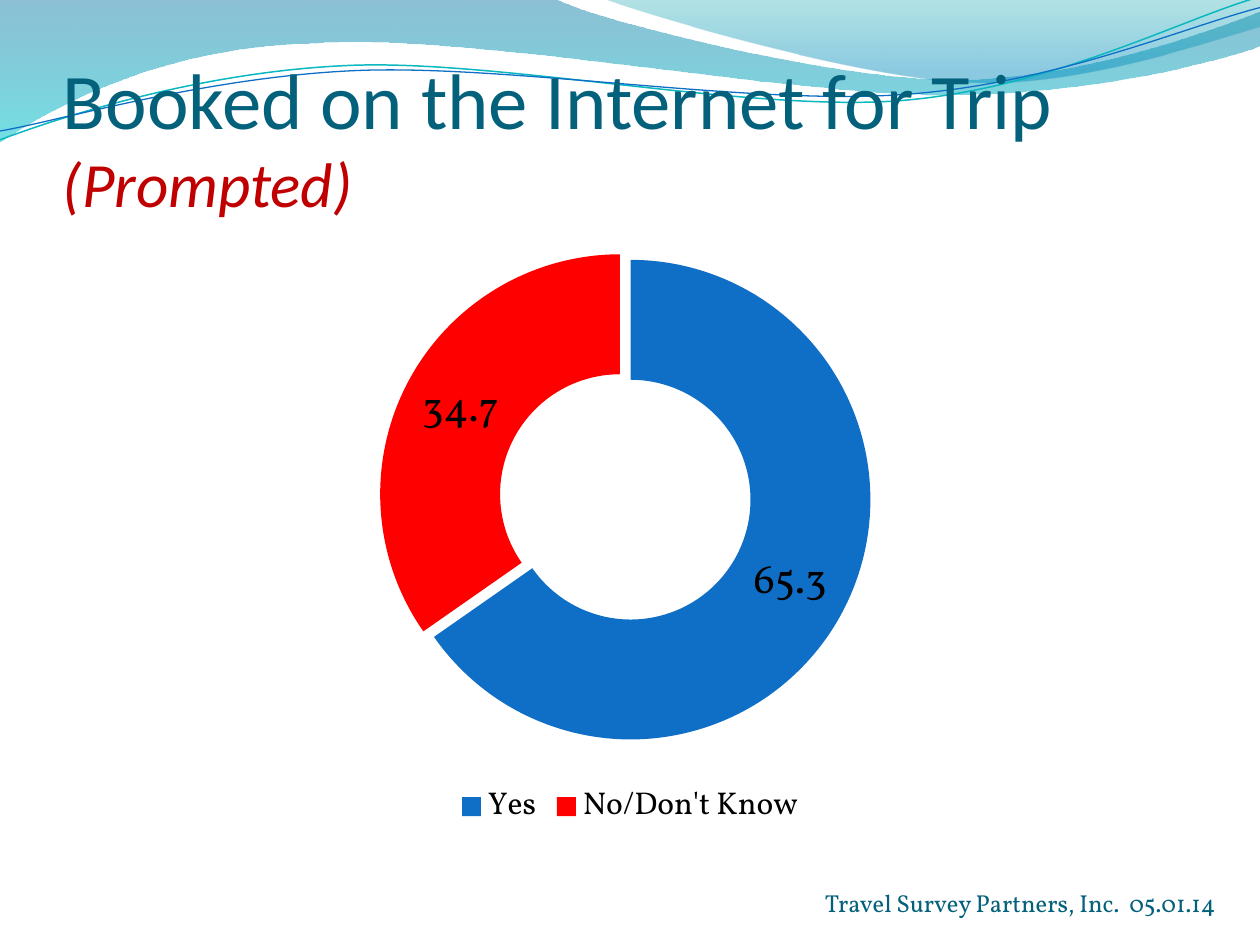
import math

from lxml import etree
from pptx import Presentation
from pptx import util as u
from pptx.chart.data import CategoryChartData
from pptx.dml.color import RGBColor
from pptx.enum import chart as ch, text
from pptx.oxml import parse_xml
from pptx.oxml.ns import nsdecls, qn

BLUE, RED, DARK_TEAL = "0F6FC6", "FF0000", "04617B"
LINE_TILT = 357.3

# Each outline: start point, then curves (6 numbers) or lines (2 numbers)
BACK_WAVE = [(0, 0), (4.4, -0.01), (4.76, 0.17, 6.64, 0.63, 7.58, 0.63),
             (8.53, 0.63, 9.58, 0.26, 10, 0.09), (10.01, 0.36),
             (9.83, 0.44, 8.7, 0.76, 7.46, 0.75),
             (6.22, 0.75, 3.82, 0.28, 2.57, 0.34),
             (1.29, 0.36, 0.46, 0.83, -0.01, 1.13), (0, 0)]
FRONT_WAVE = [(4.79, -0.01), (5.09, 0.11, 6.82, 0.62, 7.69, 0.65),
              (8.56, 0.69, 9.61, 0.32, 10, 0.21), (10, 0), (4.79, -0.01)]
TEAL_LINE = [(0, 1.11), (0.48, 0.93, 1.58, 0.57, 2.77, 0.52),
             (3.95, 0.47, 5.93, 0.89, 7.13, 0.8),
             (8.33, 0.71, 9.38, 0.15, 9.98, -0.02)]
BLUE_LINE = [(0, 1.04), (0.47, 0.96, 1.64, 0.61, 2.83, 0.56),
             (4.03, 0.51, 5.97, 0.84, 7.17, 0.75),
             (8.36, 0.67, 9.41, 0.21, 10, 0.06)]


def rgb(value):
    return RGBColor.from_string(value)


def add_outline(slide, box, steps, close, tilt=0):
    """Freeform with true curves; steps are slide positions after the tilt."""
    left, top, width, height = box
    cx, cy = left + width / 2, top + height / 2
    cos, sin = math.cos(math.radians(-tilt)), math.sin(math.radians(-tilt))

    def add_point(parent, x, y):
        dx, dy = x - cx, y - cy
        px = dx * cos - dy * sin + width / 2
        py = dx * sin + dy * cos + height / 2
        etree.SubElement(parent, qn("a:pt"), x=str(u.Inches(px)), y=str(u.Inches(py)))

    builder = slide.shapes.build_freeform(0, 0)
    builder.add_line_segments([(u.Inches(width), u.Inches(height))], close=False)
    sp = builder.convert_to_shape()
    sp.left, sp.top, sp.width, sp.height = map(u.Inches, box)
    sp.rotation = tilt
    sp.shadow.inherit = False

    outline = next(sp._element.iter(qn("a:path")))
    for child in list(outline):
        outline.remove(child)
    outline.set("w", str(u.Inches(width)))
    outline.set("h", str(u.Inches(height)))
    for i, step in enumerate(steps):
        tag = "a:moveTo" if i == 0 else "a:lnTo" if len(step) == 2 else "a:cubicBezTo"
        segment = etree.SubElement(outline, qn(tag))
        for x, y in zip(step[::2], step[1::2]):
            add_point(segment, x, y)
    if close:
        etree.SubElement(outline, qn("a:close"))
    return sp


def add_wave(slide, box, steps, stops):
    """Closed wave with a vertical gradient; stops are (percent, colour, opacity)."""
    sp = add_outline(slide, box, steps, True)
    sp.line.fill.background()
    gs = "".join(f'<a:gs pos="{pos * 1000}"><a:srgbClr val="{color}">'
                 f'<a:alpha val="{opacity * 1000}"/></a:srgbClr></a:gs>'
                 for pos, color, opacity in stops)
    grad = parse_xml(f'<a:gradFill {nsdecls("a")} rotWithShape="1"><a:gsLst>{gs}</a:gsLst>'
                     '<a:lin ang="5400000" scaled="0"/></a:gradFill>')
    sp._element.spPr.find(qn("a:custGeom")).addnext(grad)


def add_wave_line(slide, box, steps, color, width):
    sp = add_outline(slide, box, steps, False, LINE_TILT)
    sp.fill.background()
    sp.line.color.rgb = rgb(color)
    sp.line.width = u.Pt(width)


def add_text(slide, box, runs, font, align, anchor, margins):
    """One paragraph; runs are (text, size, colour, italic)."""
    tf = slide.shapes.add_textbox(*map(u.Inches, box)).text_frame
    tf.word_wrap = True
    tf.vertical_anchor = anchor
    (tf.margin_left, tf.margin_top,
     tf.margin_right, tf.margin_bottom) = map(u.Inches, margins)
    p = tf.paragraphs[0]
    p.alignment = align
    for content, size, color, italic in runs:
        r = p.add_run()
        r.text = content
        r.font.name = font
        r.font.size = u.Pt(size)
        r.font.italic = italic
        r.font.color.rgb = rgb(color)


def set_font(font, size):
    font.name = "Vollkorn"
    font.size = u.Pt(size)
    font.color.rgb = rgb("000000")


def explode(point, percent):
    """Pull a slice away from the centre."""
    sp_pr = point.format.fill._xPr
    sp_pr.addprevious(etree.Element(qn("c:explosion"), val=str(percent)))


def add_doughnut(slide):
    data = CategoryChartData(number_format="0.0")
    data.categories = ["Yes", "No/Don't Know"]
    data.add_series("Series 1", (65.3, 34.7))
    chart = slide.shapes.add_chart(ch.XL_CHART_TYPE.DOUGHNUT, u.Inches(0.5), u.Inches(1.83),
                                   u.Inches(9), u.Inches(4.8), data).chart
    set_font(chart.font, 18)
    chart.has_title = False
    chart.has_legend = True
    chart.legend.position = ch.XL_LEGEND_POSITION.BOTTOM
    chart.legend.include_in_layout = False
    set_font(chart.legend.font, 18)

    plot = chart.plots[0]
    plot._element.find(qn("c:holeSize")).set("val", "50")
    plot.has_data_labels = True
    labels = plot.data_labels
    labels.show_value = True
    labels.show_percentage = False
    set_font(labels.font, 24)

    points = plot.series[0].points
    for i, color in enumerate((BLUE, RED)):
        fill = points[i].format.fill
        fill.solid()
        fill.fore_color.rgb = rgb(color)
    explode(points[1], 10)


def main():
    prs = Presentation()
    prs.slide_width, prs.slide_height = u.Inches(10), u.Inches(7.5)
    slide = prs.slides.add_slide(prs.slide_layouts[6])

    add_wave(slide, (-0.01, -0.01, 10.02, 1.14), BACK_WAVE,
             [(0, "0074A1", 45), (100, "00C6CF", 55)])
    add_wave(slide, (4.79, -0.01, 5.21, 0.7), FRONT_WAVE,
             [(0, "00A1A9", 30), (80, "008BBF", 45)])
    add_wave_line(slide, (-0.02, 0.22, 10.02, 0.71), TEAL_LINE, "0AB8BF", 0.85)
    add_wave_line(slide, (-0.02, 0.3, 10.03, 0.58), BLUE_LINE, BLUE, 0.75)

    add_text(slide, (6.33, 7, 3.42, 0.34),
             [("Travel Survey Partners, Inc.  05.01.14", 14, DARK_TEAL, False)],
             "Vollkorn", text.PP_ALIGN.RIGHT, text.MSO_ANCHOR.TOP, (0.1, 0.05, 0.1, 0.05))
    add_text(slide, (0.5, 0.5, 9, 1.25),
             [("Booked on the Internet for Trip ", 45, DARK_TEAL, False),
              ("(Prompted)", 36, "C00000", True)],
             "Calibri", text.PP_ALIGN.LEFT, text.MSO_ANCHOR.BOTTOM, (0, 0.05, 0, 0))
    add_doughnut(slide)
    prs.save("out.pptx")


if __name__ == "__main__":
    main()
